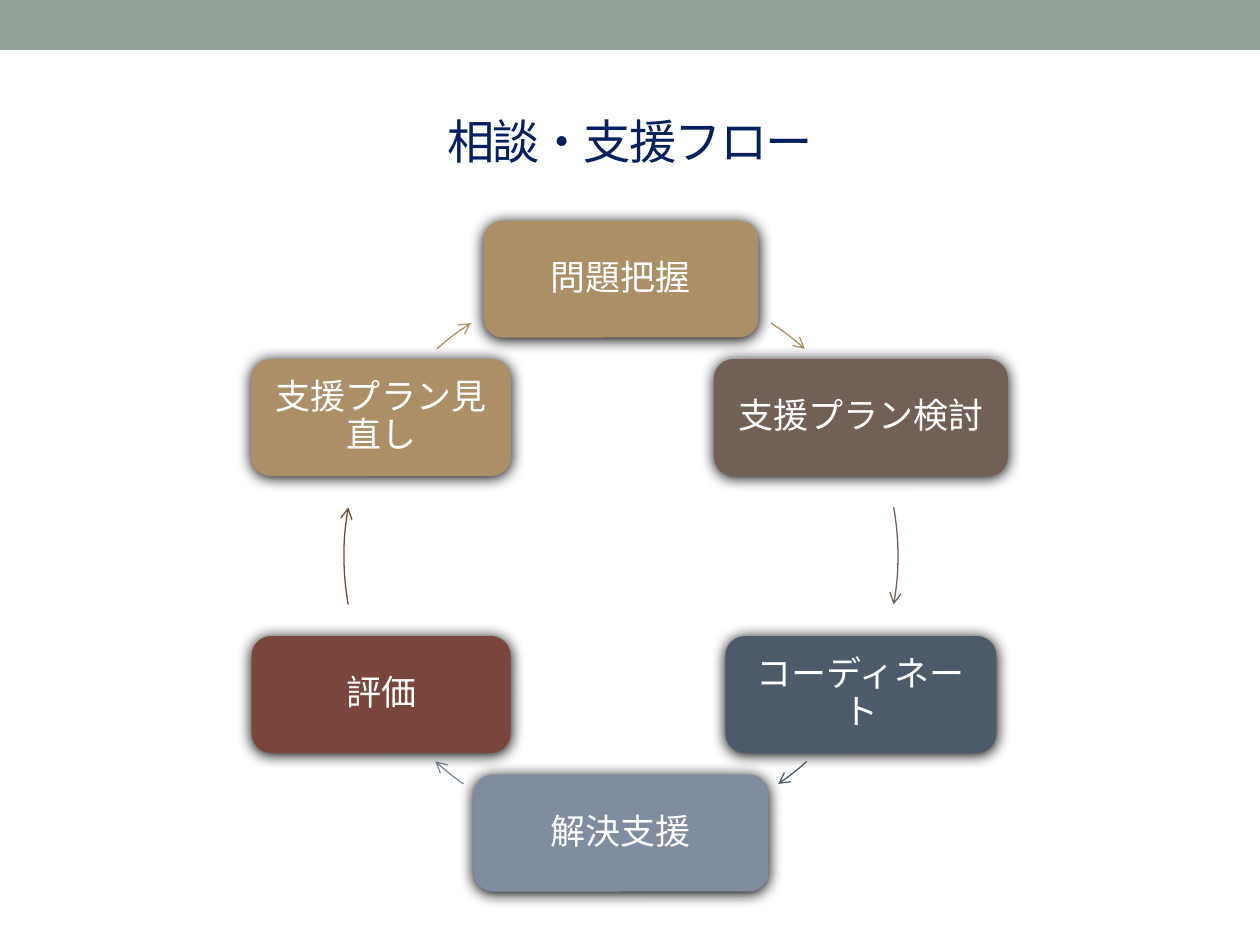
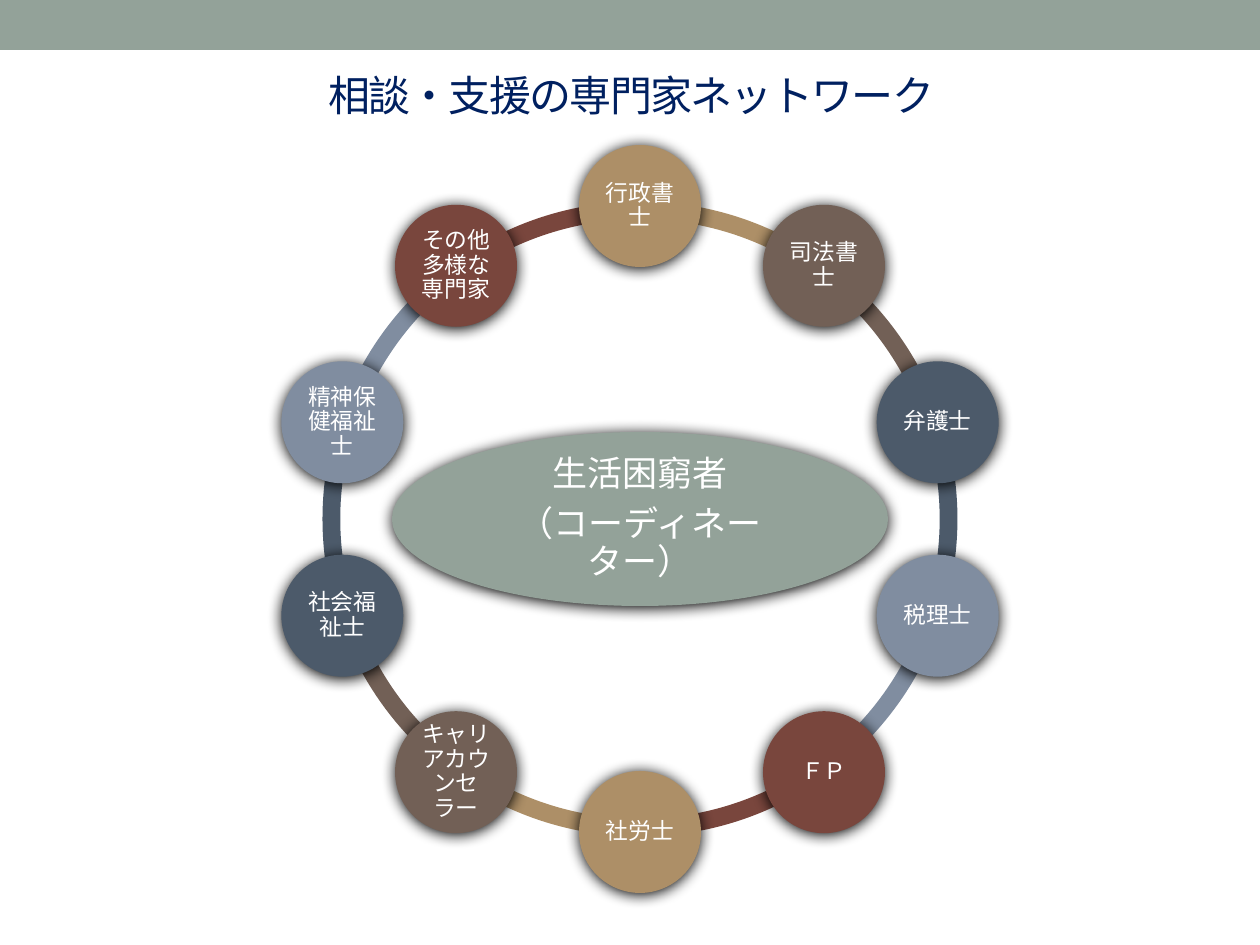
from math import cos, radians, sin

from lxml.etree import SubElement
from pptx import Presentation
from pptx.dml.color import RGBColor
from pptx.enum.shapes import MSO_SHAPE
from pptx.enum.text import MSO_ANCHOR, MSO_AUTO_SIZE, PP_ALIGN
from pptx.oxml.ns import qn
from pptx.util import Emu, Pt

SLIDE_WIDTH, SLIDE_HEIGHT, BAND_HEIGHT = 1260, 945, 50
SAGE, NAVY, WHITE = "93A299", "002060", "FFFFFF"
PALETTE = ["AD8F67", "726056", "4C5A6A", "808DA0", "79463D"]
LATIN_FONT, JAPANESE_FONT = "Arial", "Noto Sans CJK JP"

FLOW_TITLE = "相談・支援フロー"
FLOW_CENTRE, FLOW_RADIUS, STEP_HEIGHT = (621, 556), 277, 117
# label, box width, start and end angle of the arrow to the next step
FLOW_STEPS = [
    ("問題把握", 275, 302.8, 311.6),
    ("支援プラン検討", 294, 349.9, 10.1),
    ("コーディネート", 271, 47.9, 55.4),
    ("解決支援", 295, 124.6, 132.1),
    ("評価", 259, 169.9, 190.1),
    ("支援プラン見直し", 260, 228.4, 237.2),
]

NETWORK_TITLE = "相談・支援の専門家ネットワーク"
NETWORK_CENTRE, NETWORK_RADIUS = (640, 519), 313
RING_SIZE, RING_THICKNESS, EXPERT_SIZE = 635, 0.028, 122
HUB_LINES, HUB_SIZE = ["生活困窮者", "（コーディネーター）"], (496, 174)
EXPERTS = [
    "行政書士", "司法書士", "弁護士", "税理士", "ＦＰ",
    "社労士", "キャリアカウンセラー", "社会福祉士", "精神保健福祉士", "その他多様な専門家",
]


def px(length):
    return Emu(round(length * 914400 / 126))


def rgb(hex_colour):
    return RGBColor.from_string(hex_colour)


def palette_colour(index):
    return PALETTE[index % len(PALETTE)]


def on_circle(centre, radius, index, count):
    """Point number index of count, clockwise from the top."""
    angle = radians(360 * index / count - 90)
    return centre[0] + radius * cos(angle), centre[1] + radius * sin(angle)


def add_centred(slide, preset, centre, size, fill=None):
    (x, y), (width, height) = centre, size
    shape = slide.shapes.add_shape(
        preset, px(x - width / 2), px(y - height / 2), px(width), px(height))
    shape.shadow.inherit = False
    shape.line.fill.background()
    if fill:
        shape.fill.solid()
        shape.fill.fore_color.rgb = rgb(fill)
    else:
        shape.fill.background()
    return shape


def set_arc(shape, start, end):
    """Angles in degrees, clockwise from the right."""
    shape.adjustments[0] = start % 360 * 0.6
    shape.adjustments[1] = end % 360 * 0.6


def style_paragraph(paragraph, font_name, size, colour):
    paragraph.alignment = PP_ALIGN.CENTER
    font = paragraph.font
    font.name, font.size = font_name, Pt(size)
    font.color.rgb = rgb(colour)
    properties = paragraph._p.pPr.find(qn("a:defRPr"))
    SubElement(properties, qn("a:ea")).set("typeface", JAPANESE_FONT)
    return properties


def add_node(slide, preset, centre, size, fill, lines, font_size, inset):
    """Shadowed shape with centred white text."""
    node = add_centred(slide, preset, centre, size, fill)
    effects = node._element.spPr.find(qn("a:effectLst"))
    shadow = SubElement(effects, qn("a:outerShdw"), blurRad=str(Pt(8.5)),
                        dist=str(Pt(1)), dir="5400000", rotWithShape="0")
    SubElement(shadow, qn("a:srgbClr"), val="000000")
    frame = node.text_frame
    frame.word_wrap = True
    frame.vertical_anchor = MSO_ANCHOR.MIDDLE
    frame.margin_left = frame.margin_right = px(inset)
    frame.margin_top = frame.margin_bottom = px(inset)
    frame.text = "\n".join(lines)
    for paragraph in frame.paragraphs:
        style_paragraph(paragraph, LATIN_FONT, font_size, WHITE)
        paragraph.line_spacing = 0.9
        paragraph.space_after = Pt(font_size * 0.35)


def add_titled_slide(prs, text, box, size):
    slide = prs.slides.add_slide(prs.slide_layouts[5])
    title = slide.shapes.title
    title.left, title.top, title.width, title.height = map(px, box)
    frame = title.text_frame
    frame.text = text
    frame.auto_size = MSO_AUTO_SIZE.NONE
    frame.vertical_anchor = MSO_ANCHOR.MIDDLE
    style_paragraph(frame.paragraphs[0], JAPANESE_FONT, size, NAVY).set("spc", "-100")
    return slide


def move_band_to_master(prs, slide):
    band = add_centred(slide, MSO_SHAPE.RECTANGLE, (SLIDE_WIDTH / 2, BAND_HEIGHT / 2),
                       (SLIDE_WIDTH, BAND_HEIGHT), SAGE)
    prs.slide_master.element.cSld.spTree.insert(2, band._element)


def draw_flow(slide):
    for index, (label, width, start, end) in enumerate(FLOW_STEPS):
        colour = palette_colour(index)
        centre = on_circle(FLOW_CENTRE, FLOW_RADIUS, index, len(FLOW_STEPS))
        add_node(slide, MSO_SHAPE.ROUNDED_RECTANGLE, centre, (width, STEP_HEIGHT),
                 colour, [label], 20, 10)
        arrow = add_centred(slide, MSO_SHAPE.ARC, FLOW_CENTRE, (2 * FLOW_RADIUS,) * 2)
        set_arc(arrow, start, end)
        arrow.line.color.rgb = rgb(colour)
        arrow.line.width = Pt(0.75)
        SubElement(arrow.line._get_or_add_ln(), qn("a:tailEnd"), type="arrow")


def draw_network(slide):
    step = 360 / len(EXPERTS)
    for index in range(len(EXPERTS)):
        segment = add_centred(slide, MSO_SHAPE.BLOCK_ARC, NETWORK_CENTRE,
                              (RING_SIZE, RING_SIZE), palette_colour(index))
        start = 270 + index * step
        set_arc(segment, start, start + step)
        segment.adjustments[2] = RING_THICKNESS
    add_node(slide, MSO_SHAPE.OVAL, NETWORK_CENTRE, HUB_SIZE, SAGE, HUB_LINES, 20, 4)
    for index, expert in enumerate(EXPERTS):
        centre = on_circle(NETWORK_CENTRE, NETWORK_RADIUS, index, len(EXPERTS))
        add_node(slide, MSO_SHAPE.OVAL, centre, (EXPERT_SIZE, EXPERT_SIZE),
                 palette_colour(index), [expert], 13, 2)


def main():
    prs = Presentation()
    prs.slide_width, prs.slide_height = px(SLIDE_WIDTH), px(SLIDE_HEIGHT)
    flow = add_titled_slide(prs, FLOW_TITLE, (63, 73, 1134, 136), 27)
    move_band_to_master(prs, flow)
    draw_flow(flow)
    network = add_titled_slide(prs, NETWORK_TITLE, (64, 45, 1134, 100), 24)
    draw_network(network)
    prs.save("out.pptx")


if __name__ == "__main__":
    main()
